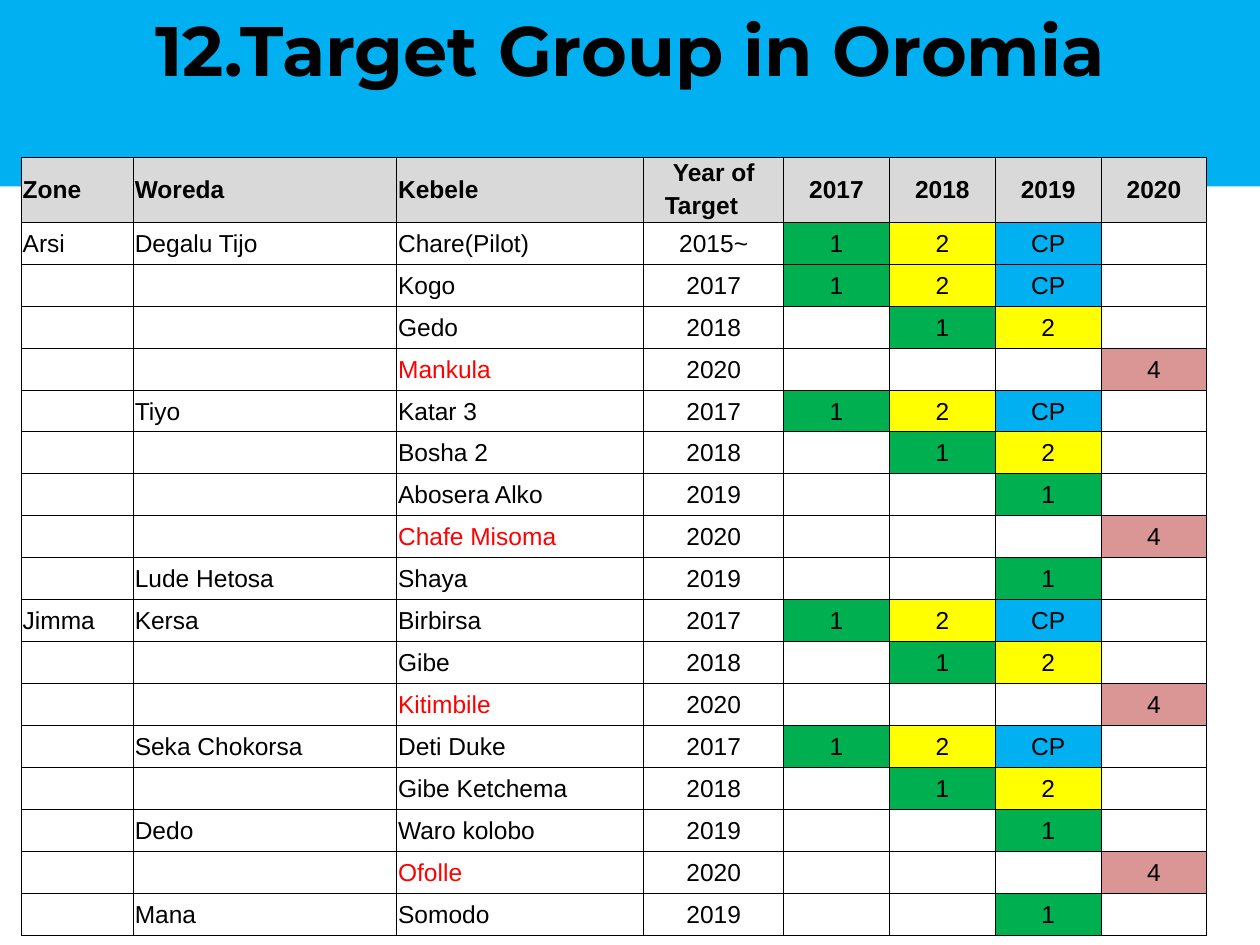
"""Build the slide that lists the target groups in Oromia by zone and year."""
from lxml import etree
from pptx import Presentation
from pptx import util as u
from pptx.dml.color import RGBColor
from pptx.enum import text
from pptx.oxml import ns

HUES = {"ink": "000000", "new": "FF0000", "head": "D9D9D9", "band": "00B0F0",
        "1": "00B050", "2": "FFFF00", "CP": "00B0F0", "4": "D99694"}
YEARS = ["2017", "2018", "2019", "2020"]
HEAD = ["Zone", "Woreda", "Kebele", "Year of Target　"] + YEARS
SITES = [
    ("Arsi", "Degalu Tijo", "Chare(Pilot)", "2015~"),
    ("", "", "Kogo", "2017"),
    ("", "", "Gedo", "2018"),
    ("", "", "Mankula", "2020"),
    ("", "Tiyo", "Katar 3", "2017"),
    ("", "", "Bosha 2", "2018"),
    ("", "", "Abosera Alko", "2019"),
    ("", "", "Chafe Misoma", "2020"),
    ("", "Lude Hetosa", "Shaya", "2019"),
    ("Jimma", "Kersa", "Birbirsa", "2017"),
    ("", "", "Gibe", "2018"),
    ("", "", "Kitimbile", "2020"),
    ("", "Seka Chokorsa", "Deti Duke", "2017"),
    ("", "", "Gibe Ketchema", "2018"),
    ("", "Dedo", "Waro kolobo", "2019"),
    ("", "", "Ofolle", "2020"),
    ("", "Mana", "Somodo", "2019"),
]
WIDTHS = [0.89, 2.09, 1.96, 1.11] + [0.84] * len(YEARS)
INSETS = {"margin_left": u.Inches(0.01), "margin_right": u.Inches(0.01),
          "margin_top": u.Inches(0.01), "margin_bottom": 0,
          "vertical_anchor": text.MSO_ANCHOR.MIDDLE}


def style(para, words, hue, align, **font):
    para.alignment = align
    run = para.add_run()
    run.text = words
    run.font.color.rgb = RGBColor.from_string(HUES[hue])
    for key, val in font.items():
        setattr(run.font, key, val)


def border(cell):
    props = cell._tc.get_or_add_tcPr()
    for side in ("lnL", "lnR", "lnT", "lnB"):
        line = etree.SubElement(props, ns.qn(f"a:{side}"), w=str(u.Pt(0.5)))
        fill = etree.SubElement(line, ns.qn("a:solidFill"))
        etree.SubElement(fill, ns.qn("a:srgbClr"), val=HUES["ink"])


deck = Presentation()
deck.slide_width, deck.slide_height = u.Inches(10), u.Inches(7.5)
slide = deck.slides.add_slide(deck.slide_layouts[5])

title = slide.shapes.title
place = {"left": 0, "top": 0, "width": deck.slide_width, "height": u.Inches(1.48)}
for key, val in place.items():
    setattr(title, key, val)
title.fill.solid()
title.fill.fore_color.rgb = RGBColor.from_string(HUES["band"])
frame = title.text_frame
setup = {"auto_size": text.MSO_AUTO_SIZE.NONE, "word_wrap": True,
         "vertical_anchor": text.MSO_ANCHOR.TOP}
for key, val in setup.items():
    setattr(frame, key, val)
style(frame.paragraphs[0], "12.Target Group in Oromia", "ink",
      text.PP_ALIGN.CENTER, name="Montserrat", size=u.Pt(40), bold=True)

rows = [HEAD]
for site in SITES:
    start = max(site[3][:4], YEARS[0])
    if start == YEARS[-1]:
        marks = ["", "", "", "4"]
    else:
        skip = YEARS.index(start)
        marks = [""] * skip + ["1", "2", "CP"][:3 - skip] + [""]
    rows.append(list(site) + marks)

grid = slide.shapes.add_table(
    len(rows), len(WIDTHS), u.Inches(0.17), u.Inches(1.25),
    u.Inches(sum(WIDTHS)), u.Inches(6)).table
grid.first_row = grid.horz_banding = False
for col, width in zip(grid.columns, WIDTHS):
    col.width = u.Inches(width)

for r, row in enumerate(rows):
    for c, words in enumerate(row):
        cell = grid.cell(r, c)
        for key, val in INSETS.items():
            setattr(cell, key, val)
        border(cell)
        tint = "head" if r == 0 else words if c > 3 else ""
        if tint:
            cell.fill.solid()
            cell.fill.fore_color.rgb = RGBColor.from_string(HUES[tint])
        else:
            cell.fill.background()
        if words:
            hue = "new" if c == 2 and row[3] == YEARS[-1] else "ink"
            align = text.PP_ALIGN.CENTER if c > 2 else text.PP_ALIGN.LEFT
            style(cell.text_frame.paragraphs[0], words, hue, align,
                  name="Arial", size=u.Pt(14), bold=r == 0)

deck.save("out.pptx")
